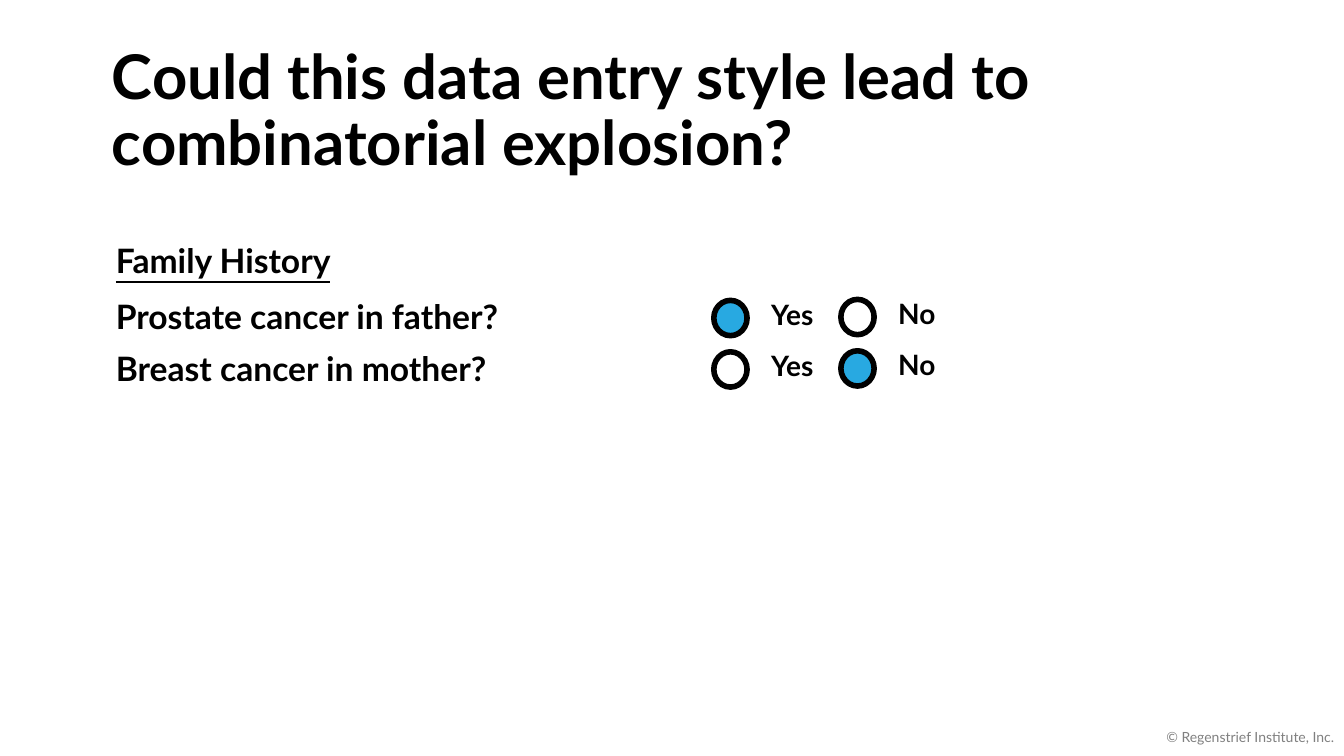
import pptx
import pptx.dml.color
import pptx.enum.shapes
import pptx.enum.text
import pptx.util

Inches = pptx.util.Inches
Pt = pptx.util.Pt
ALIGN = pptx.enum.text.PP_ALIGN
ANCHOR = pptx.enum.text.MSO_ANCHOR

# Content
TITLE_LINES = ["Could this data entry style lead to", "combinatorial explosion?"]
HEADING = "Family History"
QUESTIONS = [("Prostate cancer in father?", "Yes"), ("Breast cancer in mother?", "No")]
COPYRIGHT = "© Regenstrief Institute, Inc."

# Answer, circle left, label left, label width, vertical shift
ANSWERS = [("Yes", 7.08, 7.55, 0.66, 0.01), ("No", 8.34, 8.81, 0.58, 0)]

FONT = "Lato"
BLACK, GREY, BLUE = "000000", "808080", "28A9E1"
LEFT, HEADING_TOP, ROW_TOP, ROW_STEP = 1.05, 2.33, 2.89, 0.51
CIRCLE_DROP = 0.08


def rgb(color):
    return pptx.dml.color.RGBColor.from_string(color)


def add_run(paragraph, text, size, color=BLACK, bold=True, underline=None):
    run = paragraph.add_run()
    run.text = text
    run.font.name = FONT
    run.font.size = Pt(size)
    run.font.bold = bold
    run.font.underline = underline
    run.font.color.rgb = rgb(color)


def add_text(slide, text, box, size, wrap=True, align=ALIGN.LEFT,
             anchor=ANCHOR.TOP, **style):
    frame = slide.shapes.add_textbox(*map(Inches, box)).text_frame
    frame.word_wrap = wrap
    frame.vertical_anchor = anchor
    frame.paragraphs[0].alignment = align
    add_run(frame.paragraphs[0], text, size, **style)


def add_circle(slide, left, top, chosen):
    circle = slide.shapes.add_shape(
        pptx.enum.shapes.MSO_SHAPE.OVAL,
        Inches(left), Inches(top), Inches(0.33), Inches(0.35))
    circle.shadow.inherit = False
    circle.line.color.rgb = rgb(BLACK)
    circle.line.width = Pt(4)
    if chosen:
        circle.fill.solid()
        circle.fill.fore_color.rgb = rgb(BLUE)
    else:
        circle.fill.background()


def main():
    deck = pptx.Presentation()
    deck.slide_width, deck.slide_height = Inches(13.33), Inches(7.5)
    slide = deck.slides.add_slide(deck.slide_layouts[5])

    # Title
    title = slide.shapes.title
    title.left, title.top = Inches(1.01), Inches(0.39)
    title.width, title.height = Inches(11.5), Inches(1.45)
    title.text_frame.word_wrap = True
    title.text_frame.vertical_anchor = ANCHOR.MIDDLE
    headline = title.text_frame.paragraphs[0]
    headline.alignment = ALIGN.LEFT
    headline.line_spacing = 0.9
    for number, line in enumerate(TITLE_LINES):
        if number:
            headline.add_line_break()
        add_run(headline, line, 44)

    # Questions with their answer circles
    add_text(slide, HEADING, (LEFT, HEADING_TOP, 2.39, 0.5), 24, wrap=False, underline=True)
    for row, (question, chosen) in enumerate(QUESTIONS):
        top = ROW_TOP + row * ROW_STEP
        add_text(slide, question, (LEFT, top, 4.15, 0.5), 24)
        for answer, circle_left, label_left, label_width, shift in ANSWERS:
            add_circle(slide, circle_left, top + CIRCLE_DROP + shift, answer == chosen)
            add_text(slide, answer, (label_left, top + shift, label_width, 0.44), 20, wrap=False)

    # Footer
    add_text(slide, COPYRIGHT, (10.33, 7.11, 3, 0.4), 10, align=ALIGN.RIGHT,
             anchor=ANCHOR.MIDDLE, color=GREY, bold=False)

    deck.save("out.pptx")


if __name__ == "__main__":
    main()
